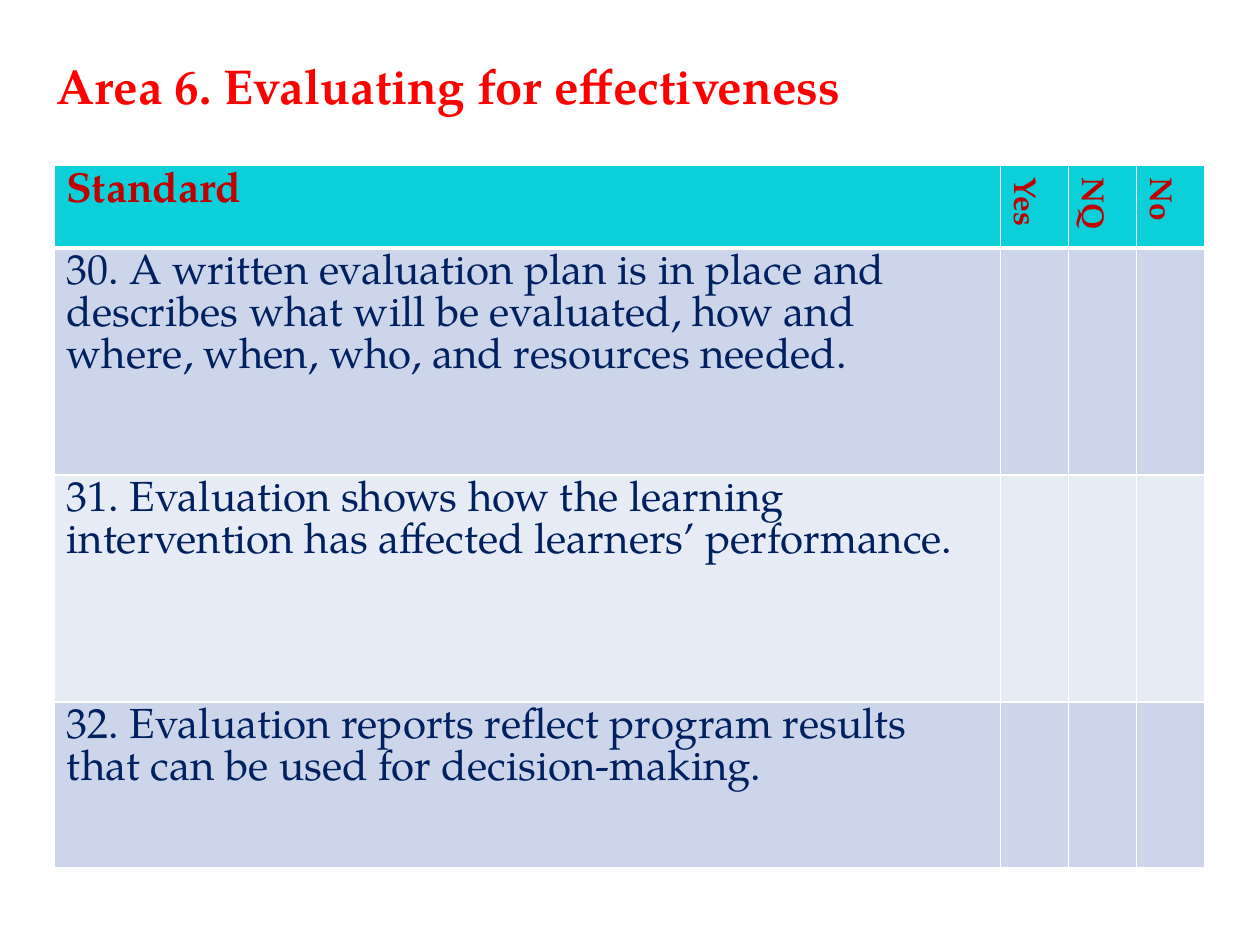
from pptx import Presentation
from pptx.dml.color import RGBColor
from pptx.enum.text import MSO_ANCHOR, PP_ALIGN
from pptx.oxml import parse_xml
from pptx.oxml.ns import nsdecls
from pptx.util import Inches, Pt

FONT = "TeX Gyre Pagella"
ROWS = [
    ("Standard", "Yes", "NQ", "No"),
    ("30. A written evaluation plan is in place and describes what will be "
     "evaluated, how and where, when, who, and resources needed.", "", "", ""),
    ("31. Evaluation shows how the learning intervention has affected "
     "learners’ performance.", "", "", ""),
    ("32. Evaluation reports reflect program results that can be used for "
     "decision-making.", "", "", ""),
]
COL_WIDTHS = (7.51, 0.54, 0.54, 0.54)
ROW_HEIGHTS = (0.66, 1.8, 1.8, 1.32)
ROW_FILLS = ("0BD0D9", "CCD5EA", "E7EBF5", "CCD5EA")


def write(tf, text, color, size, bold, spacing):
    tf.text = text
    p = tf.paragraphs[0]
    p.alignment = PP_ALIGN.LEFT
    p.line_spacing = spacing
    font = p.runs[0].font if p.runs else p.font
    for name, value in dict(name=FONT, size=Pt(size), bold=bold).items():
        setattr(font, name, value)
    font.color.rgb = RGBColor.from_string(color)


def set_borders(cell, bottom_width):
    tcPr = cell._tc.get_or_add_tcPr()
    widths = dict(lnL=1, lnR=1, lnT=1, lnB=bottom_width)
    for i, (side, width) in enumerate(widths.items()):
        tcPr.insert(i, parse_xml(
            f'<a:{side} {nsdecls("a")} w="{Pt(width)}"><a:solidFill>'
            f'<a:srgbClr val="FFFFFF"/></a:solidFill></a:{side}>'))


prs = Presentation()
prs.slide_width, prs.slide_height = Inches(10), Inches(7.5)
s = prs.slides.add_slide(prs.slide_layouts[5])

title = s.shapes.title
title.left, title.top = Inches(0.35), Inches(0.44)
title.width, title.height = Inches(8.98), Inches(0.57)
write(title.text_frame, "Area 6. Evaluating for effectiveness",
      "FF0000", 28, True, 0.9)
title.text_frame.vertical_anchor = MSO_ANCHOR.TOP

table = s.shapes.add_table(
    len(ROWS), len(COL_WIDTHS), Inches(0.43), Inches(1.31),
    Inches(sum(COL_WIDTHS)), Inches(sum(ROW_HEIGHTS))).table
for col, width in zip(table.columns, COL_WIDTHS):
    col.width = Inches(width)

for r, (texts, height, fill) in enumerate(zip(ROWS, ROW_HEIGHTS, ROW_FILLS)):
    table.rows[r].height = Inches(height)
    header = r == 0
    for c, text in enumerate(texts):
        cell = table.cell(r, c)
        cell.fill.solid()
        cell.fill.fore_color.rgb = RGBColor.from_string(fill)
        set_borders(cell, 3 if header else 1)
        size = 18 if header and c else 24
        write(cell.text_frame, text, "C00000" if header else "002060",
              size, header, Pt(size))
        if header and c:
            cell._tc.get_or_add_tcPr().set("vert", "vert")

prs.save("out.pptx")
